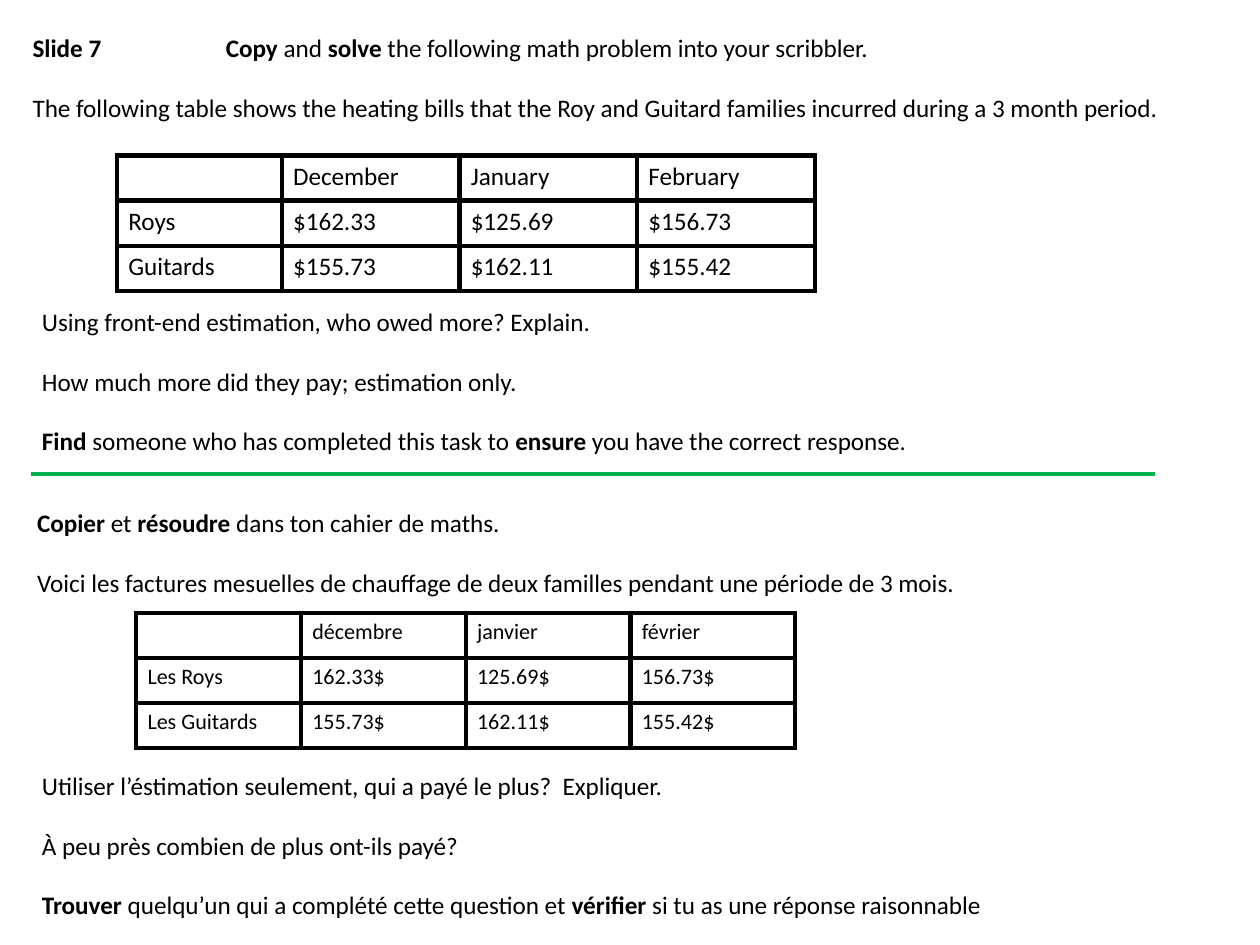
"""Build the bilingual heating bill problem slide."""
from dataclasses import dataclass
from typing import NamedTuple

from lxml.etree import SubElement
from pptx import Presentation
from pptx.dml.color import RGBColor
from pptx.enum.shapes import MSO_CONNECTOR
from pptx.enum.text import MSO_AUTO_SIZE
from pptx.oxml.ns import qn
from pptx.slide import Slide
from pptx.util import Cm, Pt

BLACK = RGBColor(0x00, 0x00, 0x00)
WHITE = RGBColor(0xFF, 0xFF, 0xFF)
GREEN = RGBColor(0x00, 0xB0, 0x50)
FONT = "Calibri"
TEXT_SIZE = 16
PARAGRAPH_GAP = Pt(18.75)
ROW_HEIGHT = 1.01
FRAME_FORMAT = {"word_wrap": True, "auto_size": MSO_AUTO_SIZE.SHAPE_TO_FIT_TEXT}
TABLE_FORMAT = {"first_row": False, "horz_banding": False}


class Span(NamedTuple):
    text: str
    bold: bool = False
    font: str = FONT


@dataclass
class TextBlock:
    left: float
    top: float
    width: float
    height: float
    paragraphs: list[list[Span]]
    tab: float = 0


@dataclass
class BillTable:
    left: float
    top: float
    columns: list[float]
    size: int
    rows: list[list[str]]


TEXTS = [
    TextBlock(0.48, 0.61, 26.7, 2.31, [
        [Span("Slide 7\tCopy", True), Span(" and "), Span("solve", True),
         Span(" the following math problem into your scribbler.")],
        [Span("The following table shows the heating bills that the Roy and Guitard"
              " families incurred during a 3 month period.")],
    ], tab=4.33),
    TextBlock(0.69, 6.73, 24.87, 4.32, [
        [Span("Using front-end estimation, who owed more? Explain.")],
        [Span("How much more did they pay; estimation only.")],
        [Span("Find", True), Span(" someone who has completed this task to "),
         Span("ensure", True), Span(" you have the correct response"),
         Span(".", font="Cambria")],
    ]),
    TextBlock(0.58, 11.23, 26.49, 2.31, [
        [Span("Copier", True), Span(" et "), Span("résoudre", True),
         Span(" dans ton cahier de maths.")],
        [Span("Voici les factures mesuelles de chauffage de deux familles"
              " pendant une période de 3 mois.")],
    ]),
    TextBlock(0.69, 17.12, 25.7, 3.68, [
        [Span("Utiliser l’éstimation seulement, qui a payé le plus?  Expliquer.")],
        [Span("À peu près combien de plus ont-ils payé?")],
        [Span("Trouver", True), Span(" quelqu’un qui a complété cette question et "),
         Span("vérifier", True), Span(" si tu as une réponse raisonnable")],
    ]),
]

TABLES = [
    BillTable(2.62, 3.48, [3.69] + [3.98] * 3, 16, [
        ["", "December", "January", "February"],
        ["Roys", "$162.33", "$125.69", "$156.73"],
        ["Guitards", "$155.73", "$162.11", "$155.42"],
    ]),
    BillTable(3.05, 13.72, [3.69] * 4, 14, [
        ["", "décembre", "janvier", "février"],
        ["Les Roys", "162.33$", "125.69$", "156.73$"],
        ["Les Guitards", "155.73$", "162.11$", "155.42$"],
    ]),
]


def set_format(target, values: dict) -> None:
    for name, value in values.items():
        setattr(target, name, value)


def add_span(p, span: Span, size: int) -> None:
    r = p.add_run()
    r.text = span.text
    set_format(r.font, {"name": span.font, "size": Pt(size), "bold": span.bold})
    r.font.color.rgb = BLACK


def add_text(s: Slide, block: TextBlock) -> None:
    box = (block.left, block.top, block.width, block.height)
    tf = s.shapes.add_textbox(*map(Cm, box)).text_frame
    set_format(tf, FRAME_FORMAT)
    for i, spans in enumerate(block.paragraphs):
        p = tf.add_paragraph() if i else tf.paragraphs[0]
        if i:
            p.space_before = PARAGRAPH_GAP
        elif block.tab:
            tabs = SubElement(p._p.get_or_add_pPr(), qn("a:tabLst"))
            SubElement(tabs, qn("a:tab"), pos=str(Cm(block.tab)), algn="l")
        for span in spans:
            add_span(p, span, TEXT_SIZE)


def add_borders(cell) -> None:
    tc_pr = cell._tc.get_or_add_tcPr()
    for side in ("lnL", "lnR", "lnT", "lnB"):
        ln = SubElement(tc_pr, qn(f"a:{side}"), w=str(Pt(3)))
        fill = SubElement(ln, qn("a:solidFill"))
        SubElement(fill, qn("a:srgbClr"), val=str(BLACK))


def add_bills(s: Slide, bills: BillTable) -> None:
    count = len(bills.rows)
    box = (bills.left, bills.top, sum(bills.columns), count * ROW_HEIGHT)
    table = s.shapes.add_table(count, len(bills.columns), *map(Cm, box)).table
    set_format(table, TABLE_FORMAT)
    for column, width in zip(table.columns, bills.columns):
        column.width = Cm(width)
    for row, texts in zip(table.rows, bills.rows):
        row.height = Cm(ROW_HEIGHT)
        for cell, text in zip(row.cells, texts):
            p = cell.text_frame.paragraphs[0]
            if text:
                add_span(p, Span(text), bills.size)
            else:
                p._p.get_or_add_endParaRPr().set("sz", str(bills.size * 100))
            add_borders(cell)
            cell.fill.solid()
            cell.fill.fore_color.rgb = WHITE


def add_divider(s: Slide) -> None:
    ends = (0.69, 10.62, 25.86, 10.62)
    line = s.shapes.add_connector(MSO_CONNECTOR.STRAIGHT, *map(Cm, ends))
    line.line.color.rgb = GREEN
    line.line.width = Pt(2.25)
    SubElement(line._element.spPr, qn("a:effectLst"))


def main() -> None:
    prs = Presentation()
    set_format(prs, {"slide_width": Cm(28.22), "slide_height": Cm(21.16)})
    s = prs.slides.add_slide(prs.slide_layouts[6])
    for block in TEXTS:
        add_text(s, block)
    for bills in TABLES:
        add_bills(s, bills)
    add_divider(s)
    prs.save("out.pptx")


if __name__ == "__main__":
    main()
